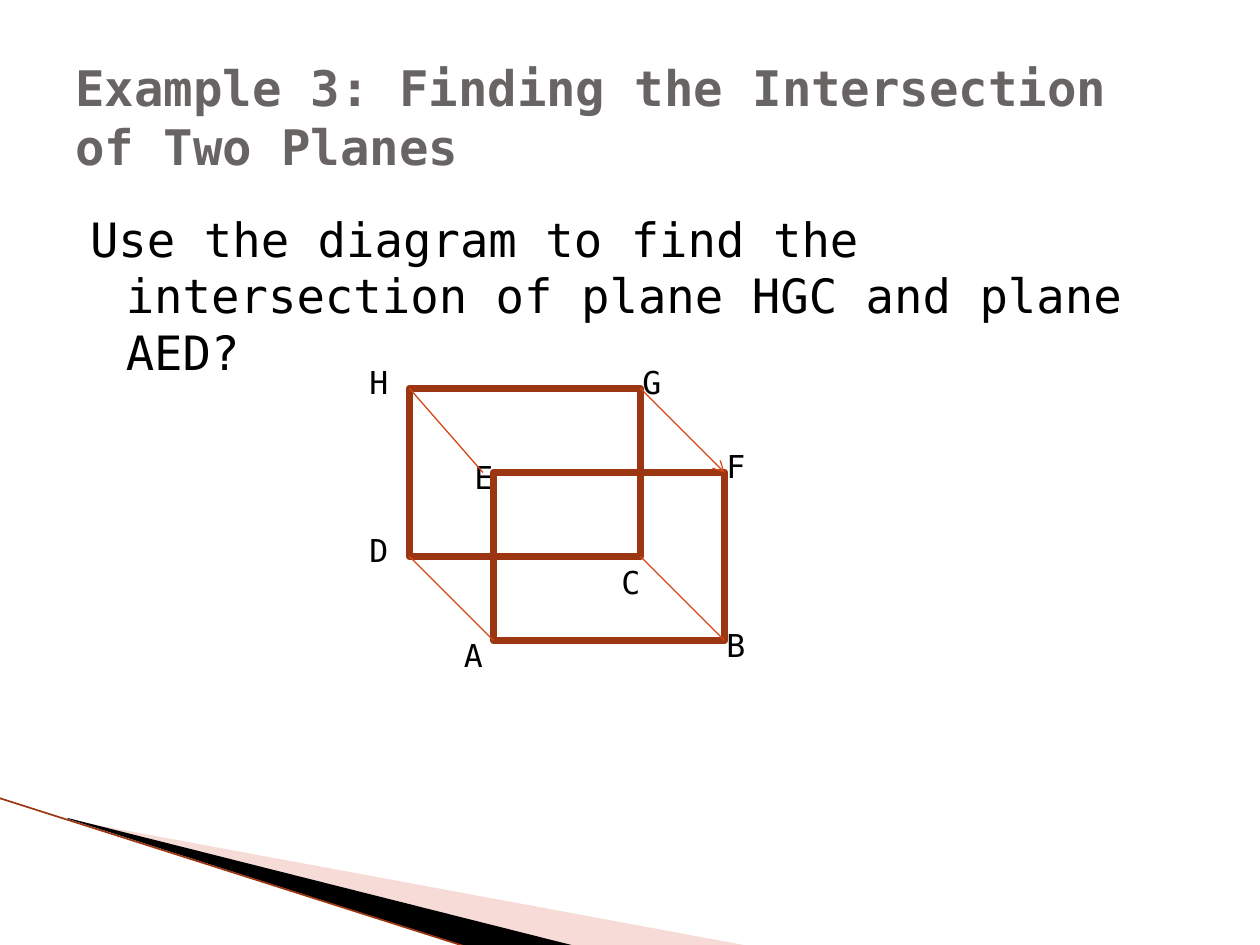
from dataclasses import dataclass

from lxml.etree import SubElement
from pptx import Presentation
from pptx.dml.color import RGBColor
from pptx.enum.shapes import MSO_CONNECTOR, MSO_SHAPE
from pptx.enum.text import MSO_ANCHOR, MSO_AUTO_SIZE
from pptx.oxml.ns import qn
from pptx.util import Pt

PX = 7620  # EMU per px, 120 px to the inch


@dataclass(frozen=True)
class Theme:
    font: str = "DejaVu Sans Mono"
    title: str = "696464"
    text: str = "000000"
    face: str = "9C3511"
    edge: str = "D34817"
    pale_wedge: str = "E9A59D"
    dark_wedge: str = "000000"
    title_size: int = 28
    body_size: int = 27
    label_size: int = 18
    face_width: float = 4.33
    edge_width: float = 0.75
    border_width: float = 0.95


THEME = Theme()
FACE_WIDTH, FACE_HEIGHT = 220, 160
BACK_FACE = (390, 370)
FRONT_FACE = (470, 450)
LABEL_SIDE = 50
LABELS = {
    "H": (340, 340), "E": (440, 430), "G": (600, 340), "C": (580, 530),
    "B": (680, 590), "D": (340, 500), "A": (430, 600), "F": (680, 420),
}


def px(*lengths):
    return [length * PX for length in lengths]


def add_text(slide, box, text, size, color, bold=False):
    shape = slide.shapes.add_textbox(*px(*box))
    frame = shape.text_frame
    frame.word_wrap = True
    paragraph = frame.paragraphs[0]
    run = paragraph.add_run()
    run.text = text
    run.font.name = THEME.font
    run.font.size = Pt(size)
    run.font.bold = bold
    run.font.color.rgb = RGBColor.from_string(color)
    return frame


def set_hanging_indent(paragraph, left, hanging):
    properties = paragraph._p.get_or_add_pPr()
    properties.set("marL", str(left * PX))
    properties.set("indent", str(-hanging * PX))


def add_label(slide, letter, position):
    frame = add_text(slide, (*position, LABEL_SIDE, LABEL_SIDE), letter,
                     THEME.label_size, THEME.text)
    frame.auto_size = MSO_AUTO_SIZE.SHAPE_TO_FIT_TEXT


def add_face(slide, corner):
    shape = slide.shapes.add_shape(
        MSO_SHAPE.RECTANGLE, *px(*corner, FACE_WIDTH, FACE_HEIGHT))
    shape.shadow.inherit = False
    shape.fill.background()
    shape.line.color.rgb = RGBColor.from_string(THEME.face)
    shape.line.width = Pt(THEME.face_width)


def add_line(slide, start, end, color, width, arrow=False):
    connector = slide.shapes.add_connector(
        MSO_CONNECTOR.STRAIGHT, *px(*start, *end))
    connector.line.color.rgb = RGBColor.from_string(color)
    connector.line.width = Pt(width)
    if arrow:
        SubElement(connector.line._get_or_add_ln(), qn("a:tailEnd"), type="arrow")
    SubElement(connector._element.spPr, qn("a:effectLst"))


def add_wedge(slide, points, color, opacity=100):
    builder = slide.shapes.build_freeform(*points[0], scale=PX)
    builder.add_line_segments(points[1:], close=True)
    shape = builder.convert_to_shape()
    shape.shadow.inherit = False
    shape.line.fill.background()
    shape.fill.solid()
    shape.fill.fore_color.rgb = RGBColor.from_string(color)
    if opacity < 100:
        rgb = shape._element.spPr.find(f"{qn('a:solidFill')}/{qn('a:srgbClr')}")
        SubElement(rgb, qn("a:alpha"), val=str(opacity * 1000))


def face_corners(corner):
    """Return top left, top right, bottom left and bottom right."""
    left, top = corner
    return [(left + x, top + y) for y in (0, FACE_HEIGHT) for x in (0, FACE_WIDTH)]


def add_decoration(slide):
    add_wedge(slide, [(66, 781), (714, 901), (547, 901), (66, 780)],
              THEME.pale_wedge, opacity=40)
    add_wedge(slide, [(64, 779), (548, 901), (446, 902), (65, 780)],
              THEME.dark_wedge)
    add_line(slide, (-1, 760), (445, 902), THEME.face, THEME.border_width)


def add_box_diagram(slide):
    for letter, position in LABELS.items():
        add_label(slide, letter, position)
    for corner in (BACK_FACE, FRONT_FACE):
        add_face(slide, corner)
    point_h, point_g, point_d, point_c = face_corners(BACK_FACE)
    point_e, point_f, point_a, point_b = face_corners(FRONT_FACE)
    beside_e = (point_e[0] - 10, point_e[1])
    for start, end in ((point_h, beside_e), (point_d, point_a),
                       (point_g, point_f), (point_c, point_b)):
        add_line(slide, start, end, THEME.edge, THEME.edge_width,
                 arrow=end == point_f)


def main():
    presentation = Presentation()
    presentation.slide_width, presentation.slide_height = px(1200, 900)
    slide = presentation.slides.add_slide(presentation.slide_layouts[6])
    add_decoration(slide)
    body = add_text(
        slide, (60, 194, 1080, 594),
        "Use the diagram to find the intersection of plane HGC and plane AED?",
        THEME.body_size, THEME.text)
    set_hanging_indent(body.paragraphs[0], left=48, hanging=34)
    title = add_text(
        slide, (60, 36, 1080, 150),
        "Example 3: Finding the Intersection of Two Planes",
        THEME.title_size, THEME.title, bold=True)
    title.vertical_anchor = MSO_ANCHOR.MIDDLE
    add_box_diagram(slide)
    presentation.save("out.pptx")


if __name__ == "__main__":
    main()
